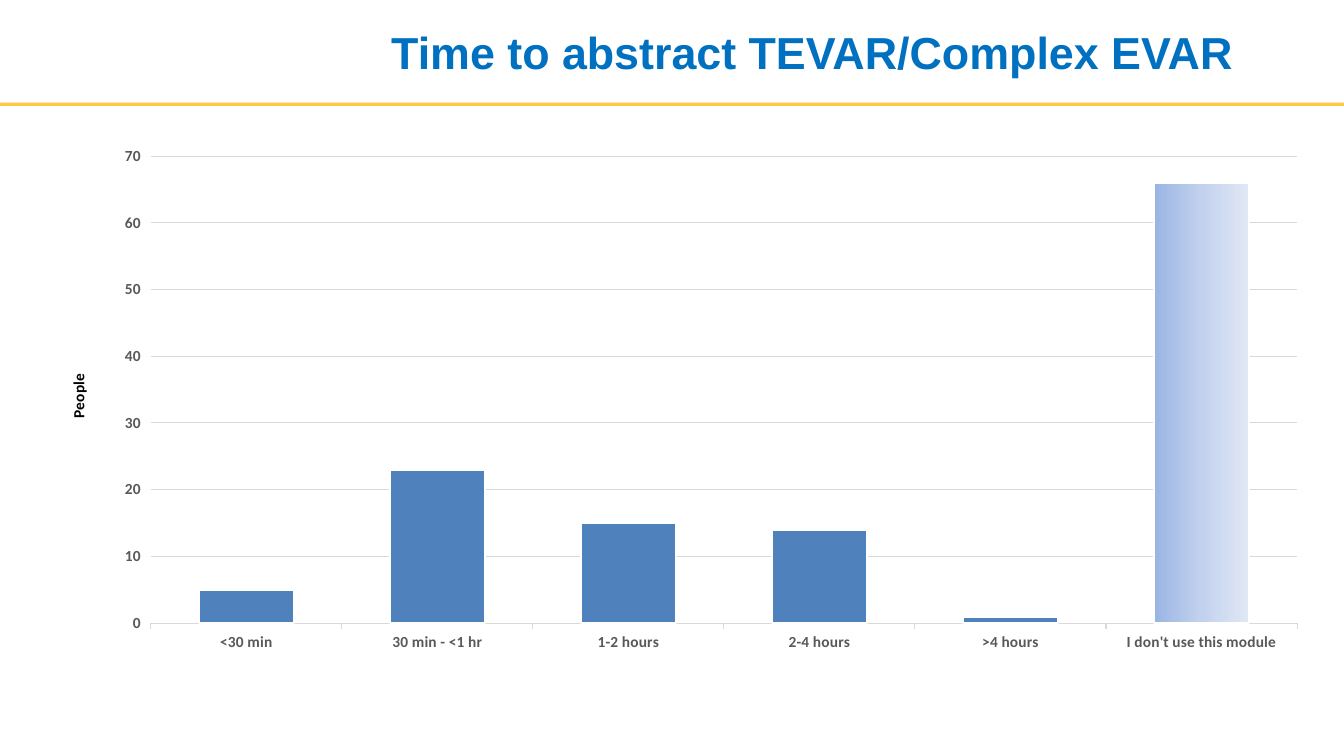
from copy import deepcopy
from dataclasses import dataclass

from lxml import etree
from pptx import Presentation
from pptx.chart.data import CategoryChartData
from pptx.dml.color import RGBColor
from pptx.enum import chart as ch, shapes, text
from pptx.oxml import ns
from pptx.util import Pt

BLUE = RGBColor(0x00, 0x70, 0xC0)
GOLD = RGBColor(0xFF, 0xC8, 0x43)
STEEL = RGBColor(0x4F, 0x81, 0xBD)
GRAY = RGBColor(0x59, 0x59, 0x59)
PALE = RGBColor(0xD9, 0xD9, 0xD9)
BLACK = RGBColor(0, 0, 0)
WHITE = RGBColor(0xFF, 0xFF, 0xFF)
FADE = (
    RGBColor(0x9A, 0xB5, 0xE4),
    RGBColor(0xC2, 0xD1, 0xED),
    RGBColor(0xE1, 0xE8, 0xF5),
)


@dataclass
class Bar:
    label: str
    count: int


BARS = [
    Bar("<30 min", 5),
    Bar("30 min - <1 hr", 23),
    Bar("1-2 hours", 15),
    Bar("2-4 hours", 14),
    Bar(">4 hours", 1),
    Bar("I don't use this module", 66),
]


def style(font, size: float, color: RGBColor, name: str = "Calibri") -> None:
    font.name, font.size, font.bold = name, Pt(size), True
    font.color.rgb = color


def write(shape, words: str, *, size: float, color: RGBColor,
          name: str = "Calibri", anchor=text.MSO_ANCHOR.TOP) -> None:
    frame = shape.text_frame
    frame.word_wrap = True
    frame.vertical_anchor = anchor
    para = frame.paragraphs[0]
    para.alignment = text.PP_ALIGN.LEFT
    run = para.add_run()
    run.text = words
    style(run.font, size, color, name)


def edge(line, color: RGBColor, width: float) -> None:
    line.color.rgb = color
    line.width = Pt(width)


def fade(fill, root) -> None:
    """Fill with the three FADE colours, left to right."""
    fill.gradient()
    fill.gradient_angle = 0
    stops = next(root.iter(ns.qn("a:gsLst")))
    stops.insert(1, deepcopy(stops[0]))
    for i, (stop, color) in enumerate(zip(fill.gradient_stops, FADE)):
        stop.position = i / (len(FADE) - 1)
        stop.color.rgb = color


def place(chart, **box: float) -> None:
    """Fix the inner plot area, as fractions of the chart."""
    area = next(chart.element.iter(ns.qn("c:plotArea")))
    for old in area.findall(ns.qn("c:layout")):
        area.remove(old)
    layout = etree.Element(ns.qn("c:layout"))
    area.insert(0, layout)
    manual = etree.SubElement(layout, ns.qn("c:manualLayout"))
    parts = {"layoutTarget": "inner", "xMode": "edge", "yMode": "edge", **box}
    for tag, val in parts.items():
        etree.SubElement(manual, ns.qn("c:" + tag), val=str(val))


def plot(slide) -> None:
    data = CategoryChartData()
    data.categories = [bar.label for bar in BARS]
    data.add_series("Series 1", [bar.count for bar in BARS])
    chart = slide.shapes.add_chart(
        ch.XL_CHART_TYPE.COLUMN_CLUSTERED,
        Pt(72), Pt(97.2), Pt(872), Pt(376.6), data).chart
    chart.has_legend = chart.has_title = False
    style(chart.font, 11, BLACK)
    place(chart, x=0.041, y=0.038, w=0.939, h=0.886)

    # Axes
    cats, vals = chart.category_axis, chart.value_axis
    for axis in (cats, vals):
        style(axis.tick_labels.font, 11, GRAY)
        axis.major_tick_mark = ch.XL_TICK_MARK.OUTSIDE
        axis.minor_tick_mark = ch.XL_TICK_MARK.NONE
    edge(cats.format.line, PALE, 0.75)
    vals.format.line.fill.background()
    vals.minimum_scale, vals.maximum_scale, vals.major_unit = 0, 70, 10
    edge(vals.major_gridlines.format.line, PALE, 0.75)

    # Columns
    group = chart.plots[0]
    group.gap_width = 100
    group.vary_by_categories = False
    series = group.series[0]
    series.format.fill.solid()
    series.format.fill.fore_color.rgb = STEEL
    last = series.points[len(BARS) - 1]
    fade(last.format.fill, chart.element)
    for part in (series, last):
        edge(part.format.line, WHITE, 1.5)


def main() -> None:
    deck = Presentation()
    deck.slide_width, deck.slide_height = Pt(960), Pt(540)
    slide = deck.slides.add_slide(deck.slide_layouts[5])

    # Rule below the title
    rule = slide.shapes.add_shape(
        shapes.MSO_SHAPE.RECTANGLE, 0, Pt(73.4), Pt(960), Pt(2.2))
    rule.shadow.inherit = False
    rule.fill.solid()
    rule.fill.fore_color.rgb = GOLD
    rule.line.fill.background()

    plot(slide)

    # Title
    title = slide.shapes.title
    title.left, title.top = Pt(272.2), Pt(0)
    title.width, title.height = Pt(624.2), Pt(73.4)
    write(title, "Time to abstract TEVAR/Complex EVAR", size=32, color=BLUE,
          name="Arial", anchor=text.MSO_ANCHOR.MIDDLE)

    # Axis label
    label = slide.shapes.add_textbox(Pt(-65.5), Pt(173.5), Pt(243.4), Pt(20.9))
    label.rotation = 270
    write(label, "People", size=11, color=BLACK)

    deck.save("out.pptx")


if __name__ == "__main__":
    main()
